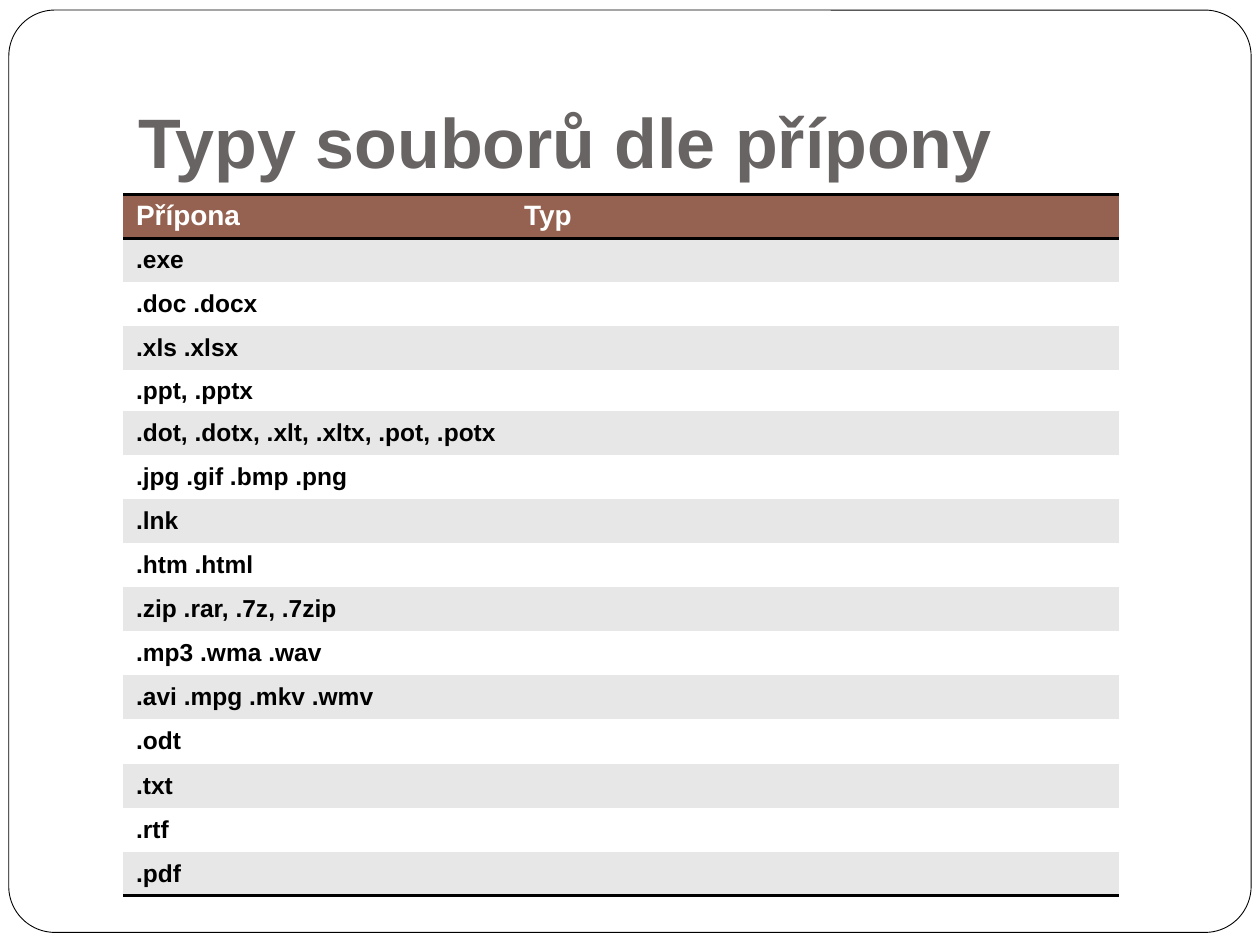
from lxml.etree import SubElement
from pptx import Presentation
from pptx.dml.color import RGBColor
from pptx.enum.shapes import MSO_SHAPE as Shape
from pptx.enum.text import MSO_ANCHOR as Anchor
from pptx.oxml import parse_xml
from pptx.oxml.ns import nsdecls, qn
from pptx.util import Inches, Pt

EXTENSIONS = [
    ".exe", ".doc .docx", ".xls .xlsx", ".ppt, .pptx",
    ".dot, .dotx, .xlt, .xltx, .pot, .potx", ".jpg .gif .bmp .png",
    ".lnk", ".htm .html", ".zip .rar, .7z, .7zip", ".mp3 .wma .wav",
    ".avi .mpg .mkv .wmv", ".odt", ".txt", ".rtf", ".pdf",
]
NO_STYLE = "{2D5ABB26-0587-4C30-8999-92F81FD0307C}"


def rgb(value):
    return RGBColor.from_string(value)


class SlideBuilder:
    """Draws styled elements on the current slide."""

    font = "Arial"
    black, white = "000000", "FFFFFF"
    title_color, header_fill, band_fill = "696464", "956251", "E7E7E7"

    def __init__(self, slide):
        self.slide = slide

    def style(self, paragraph, size, color):
        font = paragraph.font
        font.name, font.size, font.bold = self.font, Pt(size), True
        font.color.rgb = rgb(color)

    def frame(self, left, top, width, height):
        shape = self.slide.shapes.add_shape(
            Shape.ROUNDED_RECTANGLE, *map(Inches, (left, top, width, height)))
        shape.adjustments[0] = 0.05
        shape.shadow.inherit = False
        shape.fill.solid()
        shape.fill.fore_color.rgb = rgb(self.white)
        shape.line.color.rgb = rgb(self.black)
        shape.line.width = Pt(0.5)

    def title(self, text, left, top, width, height):
        box = self.slide.shapes.add_textbox(*map(Inches, (left, top, width, height)))
        text_frame = box.text_frame
        text_frame.word_wrap = True
        text_frame.vertical_anchor = Anchor.BOTTOM
        text_frame.margin_bottom = Inches(0.1)
        text_frame.text = text
        self.style(text_frame.paragraphs[0], 40, self.title_color)

    def border(self, cell, sides):
        properties = cell._tc.get_or_add_tcPr()
        for index, side in enumerate(sides):
            line = parse_xml(f'<a:ln{side} {nsdecls("a")} w="{Pt(2)}"/>')
            fill = SubElement(line, qn("a:solidFill"))
            SubElement(fill, qn("a:srgbClr"), val=self.black)
            properties.insert(index, line)

    def cell(self, cell, text, size, color, fill):
        cell.text = text
        cell.vertical_anchor = Anchor.MIDDLE
        cell.margin_top = cell.margin_bottom = 0
        cell.fill.solid()
        cell.fill.fore_color.rgb = rgb(fill)
        self.style(cell.text_frame.paragraphs[0], size, color)

    def table(self, rows, left, top, widths, heights):
        box = map(Inches, (left, top, sum(widths), sum(heights)))
        table = self.slide.shapes.add_table(len(rows), len(widths), *box).table
        table._tbl.tblPr.find(qn("a:tableStyleId")).text = NO_STYLE
        table.horz_banding = False
        for column, width in zip(table.columns, widths):
            column.width = Inches(width)
        for index, (row, values) in enumerate(zip(table.rows, rows)):
            row.height = Inches(heights[index])
            band = self.band_fill if index % 2 else self.white
            look = (14, self.black, band) if index else (16, self.white, self.header_fill)
            for cell, text in zip(row.cells, values):
                self.cell(cell, text, *look)
                if index == 0:
                    self.border(cell, "TB")
                elif index == len(rows) - 1:
                    self.border(cell, "B")


def main():
    presentation = Presentation()
    presentation.slide_width, presentation.slide_height = Inches(10), Inches(7.5)
    builder = SlideBuilder(presentation.slides.add_slide(presentation.slide_layouts[6]))
    builder.frame(0.07, 0.08, 9.86, 7.32)
    builder.title("Typy souborů dle přípony", 1, 0.3, 8.5, 1.25)
    rows = [("Přípona", "Typ")] + [(extension, "") for extension in EXTENSIONS]
    heights = [0.35] * len(rows)
    heights[4] = 0.32
    builder.table(rows, 0.98, 1.54, [3.08, 4.82], heights)
    presentation.save("out.pptx")


if __name__ == "__main__":
    main()
